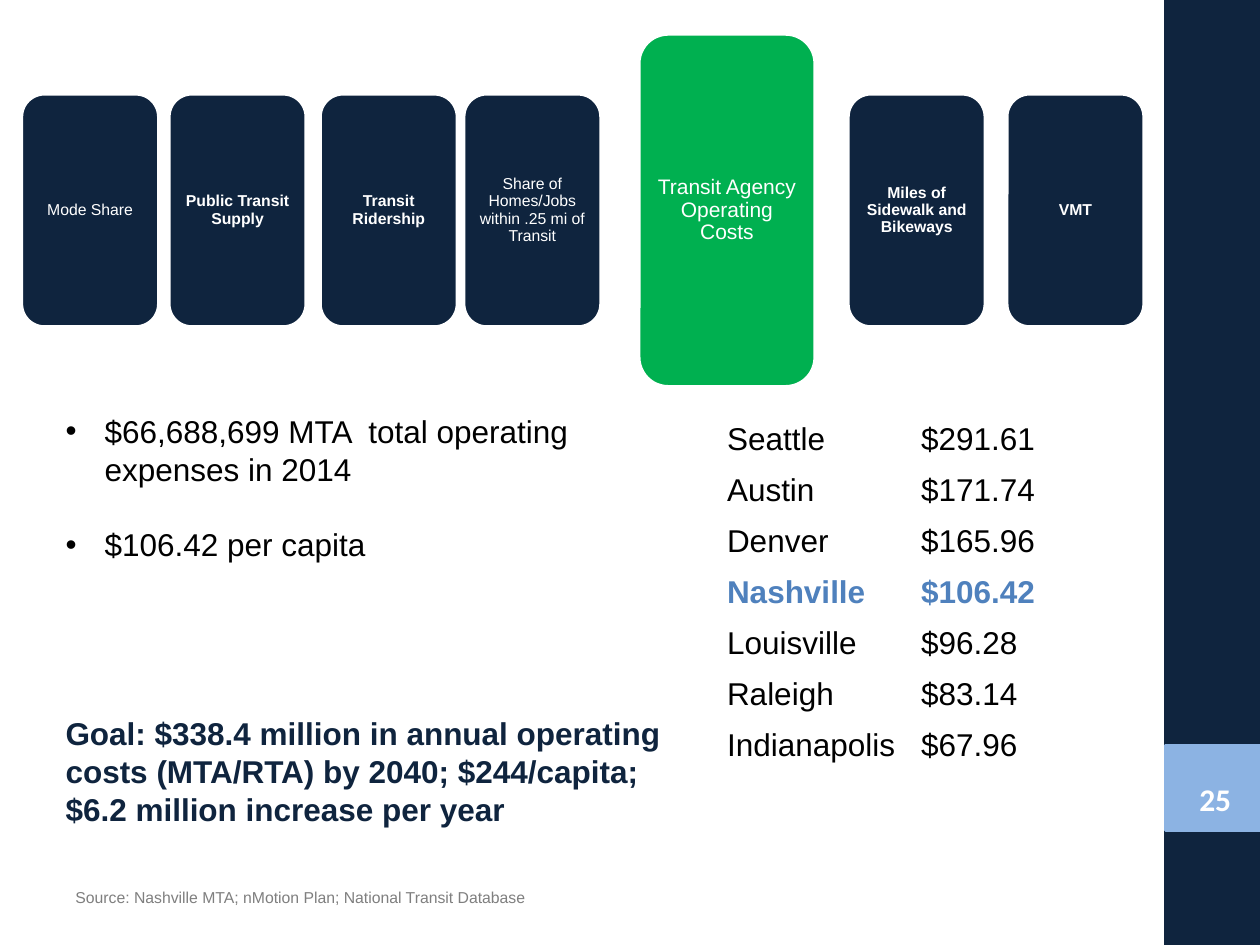
from dataclasses import dataclass

import pptx
import pptx.dml.color
import pptx.enum.shapes
import pptx.enum.text
import pptx.util
from lxml import etree
from pptx.oxml.ns import qn
from pptx.util import Inches

NAVY, GREEN, WHITE, BLACK = "0F243E", "00B050", "FFFFFF", "000000"
LIGHT_BLUE, HIGHLIGHT, GRAY = "8CB3E3", "4F81BD", "7F7F7F"
Shapes = pptx.enum.shapes.MSO_SHAPE
Anchor = pptx.enum.text.MSO_ANCHOR
Align = pptx.enum.text.PP_ALIGN


@dataclass
class Card:
    left: float
    text: str
    bold: bool = True
    active: bool = False


CARDS = [
    Card(0.17, "Mode Share", bold=False),
    Card(1.34, "Public Transit Supply"),
    Card(2.54, "Transit Ridership"),
    Card(3.68, "Share of Homes/Jobs within .25 mi of Transit", bold=False),
    Card(5.07, "Transit Agency Operating Costs", bold=False, active=True),
    Card(6.73, "Miles of Sidewalk and Bikeways"),
    Card(7.99, "VMT"),
]
COSTS = [
    ("Seattle", "$291.61"),
    ("Austin", "$171.74"),
    ("Denver", "$165.96"),
    ("Nashville", "$106.42"),
    ("Louisville", "$96.28"),
    ("Raleigh", "$83.14"),
    ("Indianapolis", "$67.96"),
]


def color(value: str) -> pptx.dml.color.RGBColor:
    return pptx.dml.color.RGBColor.from_string(value)


def write(para, text: str, size: float = 18, fill: str = BLACK, bold: bool = False,
          font: str = "Arial", align=Align.LEFT, spacing: float = 1.0,
          before: float = 0) -> None:
    para.alignment = align
    para.line_spacing = spacing
    para.space_before = pptx.util.Pt(before)
    span = para.add_run()
    span.text = text
    span.font.name = font
    span.font.size = pptx.util.Pt(size)
    span.font.bold = bold
    span.font.color.rgb = color(fill)


def set_bullet(para, indent: float, mark: str = "") -> None:
    """Give the paragraph a hanging bullet, or none when mark is empty."""
    properties = para._p.get_or_add_pPr()
    properties.set("marL", str(Inches(indent)))
    properties.set("indent", str(-Inches(indent)))
    if mark:
        font = etree.SubElement(properties, qn("a:buFont"))
        font.set("typeface", "Arial")
        etree.SubElement(properties, qn("a:buChar")).set("char", mark)
    else:
        etree.SubElement(properties, qn("a:buNone"))


def add_block(page, kind, left: float, top: float, width: float, height: float,
              fill: str, line: str):
    block = page.shapes.add_shape(
        kind, Inches(left), Inches(top), Inches(width), Inches(height))
    block.shadow.inherit = False
    block.fill.solid()
    block.fill.fore_color.rgb = color(fill)
    block.line.color.rgb = color(line)
    block.line.width = pptx.util.Pt(2)
    return block


def add_card(page, card: Card) -> None:
    width, height = (1.4, 2.8) if card.active else (1.09, 1.85)
    middle = 1.67
    block = add_block(page, Shapes.ROUNDED_RECTANGLE, card.left, middle - height / 2,
                      width, height, GREEN if card.active else NAVY, WHITE)
    frame = block.text_frame
    frame.word_wrap = True
    frame.vertical_anchor = Anchor.MIDDLE
    inset = Inches(0.05 if card.active else 0.04)
    frame.margin_left = frame.margin_right = inset
    frame.margin_top = frame.margin_bottom = inset
    write(frame.paragraphs[0], card.text, size=12 if card.active else 9,
          fill=WHITE, bold=card.bold, align=Align.CENTER, spacing=0.9)


def add_label(page, left: float, top: float, width: float, height: float,
              text: str, **style) -> None:
    box = page.shapes.add_textbox(
        Inches(left), Inches(top), Inches(width), Inches(height))
    box.text_frame.word_wrap = False
    write(box.text_frame.paragraphs[0], text, **style)


def fill_body(body) -> None:
    body.left, body.top = Inches(0.42), Inches(3.22)
    body.width, body.height = Inches(5), Inches(3.43)
    frame = body.text_frame
    frame.auto_size = pptx.enum.text.MSO_AUTO_SIZE.NONE
    frame.word_wrap = True
    frame.vertical_anchor = Anchor.TOP
    first, second, goal = frame.paragraphs[0], frame.add_paragraph(), frame.add_paragraph()
    for para in (first, second):
        set_bullet(para, 0.31, "•")
    set_bullet(goal, 0)
    write(first, "$66,688,699 MTA  total operating expenses in 2014")
    write(second, "$106.42 per capita", before=21.6)
    write(goal, "Goal: $338.4 million in annual operating costs (MTA/RTA) by 2040; "
                "$244/capita; $6.2 million increase per year",
          fill=NAVY, bold=True, before=86.4)


def add_costs(page) -> None:
    row_height, column_width = 0.405, 1.54
    table = page.shapes.add_table(
        len(COSTS), 2, Inches(5.67), Inches(3.3),
        Inches(2 * column_width), Inches(row_height * len(COSTS))).table
    table.first_row = table.horz_banding = False
    for column in table.columns:
        column.width = Inches(column_width)
    for row, values in zip(table.rows, COSTS):
        row.height = Inches(row_height)
        home = values[0] == "Nashville"
        for cell, text in zip(row.cells, values):
            cell.fill.background()
            write(cell.text_frame.paragraphs[0], text, bold=home,
                  fill=HIGHLIGHT if home else BLACK)
            # Clear the borders of the default table style
            properties = cell._tc.get_or_add_tcPr()
            for place, side in enumerate(("lnL", "lnR", "lnT", "lnB")):
                border = etree.Element(qn(f"a:{side}"))
                etree.SubElement(border, qn("a:noFill"))
                properties.insert(place, border)


def main() -> None:
    deck = pptx.Presentation()
    deck.slide_width, deck.slide_height = Inches(10), Inches(7.5)
    page = deck.slides.add_slide(deck.slide_layouts[1])
    title = page.shapes.title
    title.element.getparent().remove(title.element)

    # Side band with the page number
    add_block(page, Shapes.RECTANGLE, 9.25, 0, 0.75, 7.5, NAVY, NAVY)
    add_block(page, Shapes.RECTANGLE, 9.25, 5.92, 0.75, 0.67, LIGHT_BLUE, LIGHT_BLUE)
    add_label(page, 9.42, 6.14, 0.46, 0.4, "25", fill=WHITE, bold=True, font="Calibri")

    # Row of measures
    for card in CARDS:
        add_card(page, card)

    # Findings, peer cities and source
    fill_body(page.placeholders[1])
    add_costs(page)
    add_label(page, 0.5, 7, 3.82, 0.25,
              "Source: Nashville MTA; nMotion Plan; National Transit Database",
              size=9, fill=GRAY)

    deck.save("out.pptx")


if __name__ == "__main__":
    main()
